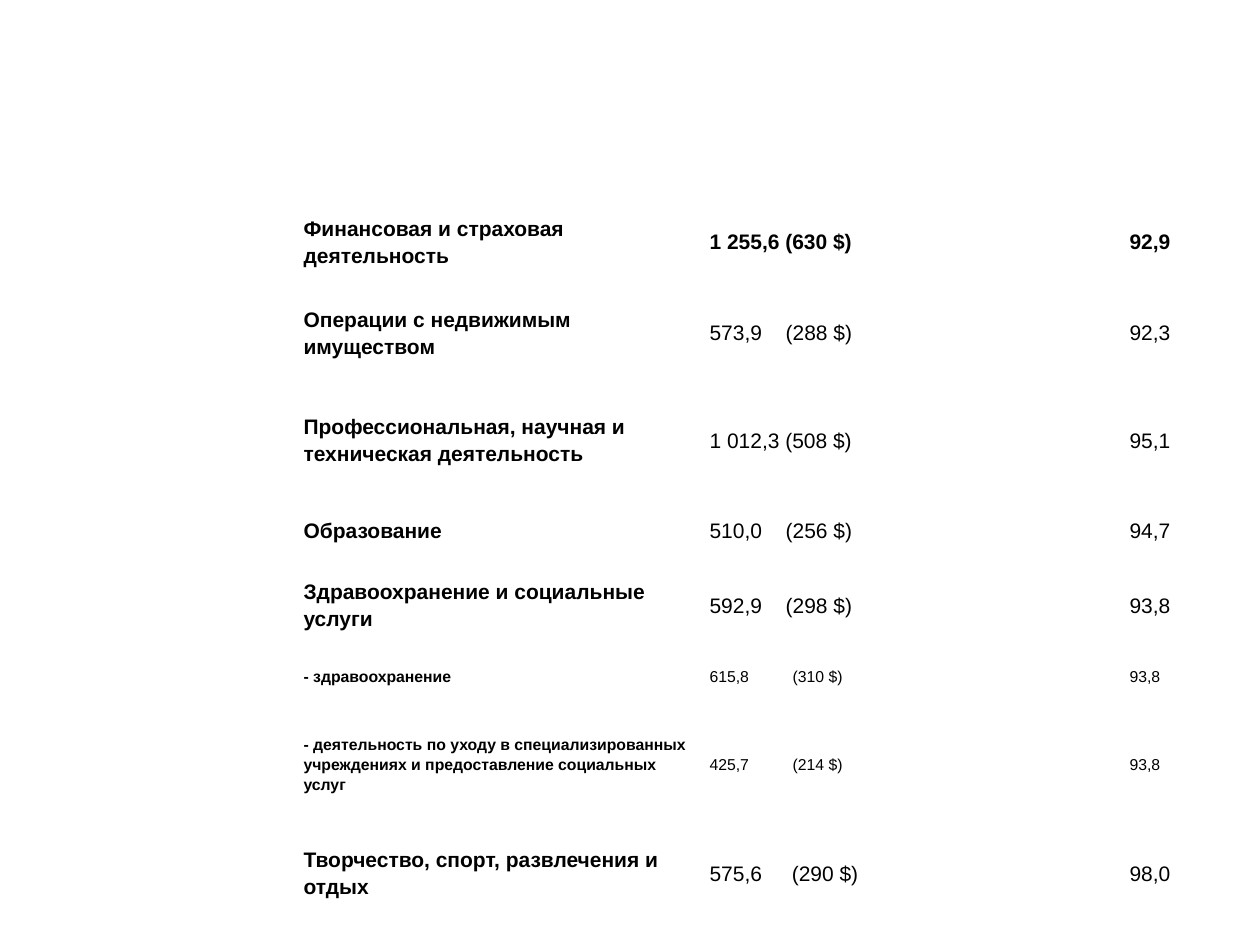
from lxml.etree import Element, SubElement
from pptx import Presentation
from pptx.dml.color import RGBColor
from pptx.enum.text import MSO_ANCHOR
from pptx.oxml.ns import qn
from pptx.util import Pt

BLACK = RGBColor(0, 0, 0)
WHITE = RGBColor(255, 255, 255)
FONT = "Arial"
INSET = 6.5
COLUMN_WIDTHS = (232, 240, 67)
BODY, DETAIL = 12, 9

WAGES = [
    (52, BODY, 43.5, "Финансовая и страховая деятельность", "1\u00a0255,6 (630 $)", "92,9"),
    (52, BODY, 43.5, "Операции с недвижимым имуществом", "573,9\t(288 $)", "92,3"),
    (70.5, BODY, 43.5, "Профессиональная, научная и техническая деятельность",
     "1\u00a0012,3 (508 $)", "95,1"),
    (33, BODY, 43.5, "Образование", "510,0\t(256 $)", "94,7"),
    (52, BODY, 43.5, "Здравоохранение и социальные услуги", "592,9\t(298 $)", "93,8"),
    (29.5, DETAIL, 47.5, "- здравоохранение", "615,8\t(310 $)", "93,8"),
    (71.5, DETAIL, 47.5, "- деятельность по уходу в специализированных учреждениях "
     "и предоставление социальных услуг", "425,7\t(214 $)", "93,8"),
    (52, BODY, 47, "Творчество, спорт, развлечения и отдых", "575,6\t(290 $)", "98,0"),
]


def set_borders(cell, top, bottom):
    properties = cell._tc.get_or_add_tcPr()
    sides = (("L", 1), ("R", 1), ("T", top), ("B", bottom))
    for position, (side, width) in enumerate(sides):
        border = Element(qn(f"a:ln{side}"), w=str(Pt(width)))
        fill = SubElement(border, qn("a:solidFill"))
        SubElement(fill, qn("a:srgbClr"), val=str(WHITE))
        properties.insert(position, border)


def fill_cell(cell, wording, size, bold, tab_stop):
    cell.fill.background()
    cell.vertical_anchor = MSO_ANCHOR.MIDDLE
    cell.margin_left = cell.margin_right = Pt(INSET)
    cell.margin_top = cell.margin_bottom = Pt(INSET)
    cell.text = wording
    paragraph = cell.text_frame.paragraphs[0]
    paragraph.line_spacing = 1.15
    paragraph.space_after = Pt(10)
    if "\t" in wording:
        stops = SubElement(paragraph._p.get_or_add_pPr(), qn("a:tabLst"))
        SubElement(stops, qn("a:tab"), pos=str(Pt(tab_stop)), algn="l")
    font = paragraph.font
    font.name = FONT
    font.size = Pt(size)
    font.bold = bold
    font.color.rgb = BLACK


def add_wage_table(slide, left, top, width, height):
    frame = slide.shapes.add_table(len(WAGES), len(COLUMN_WIDTHS),
                                   Pt(left), Pt(top), Pt(width), Pt(height))
    table = frame.table
    table.first_row = table.horz_banding = False
    for column, share in zip(table.columns, COLUMN_WIDTHS):
        column.width = Pt(width * share / sum(COLUMN_WIDTHS))
    total = sum(wage[0] for wage in WAGES)
    for r, (share, size, tab_stop, *entries) in enumerate(WAGES):
        table.rows[r].height = Pt(height * share / total)
        for c, wording in enumerate(entries):
            cell = table.cell(r, c)
            fill_cell(cell, wording, size, r == 0 or c == 0, tab_stop)
            set_borders(cell, 3 if r == 1 else 1, 3 if r == 0 else 1)


def main():
    deck = Presentation()
    deck.slide_width, deck.slide_height = Pt(720), Pt(540)
    slide = deck.slides.add_slide(deck.slide_layouts[6])
    add_wage_table(slide, 167, 111.5, 539, 413)
    deck.save("out.pptx")


if __name__ == "__main__":
    main()
